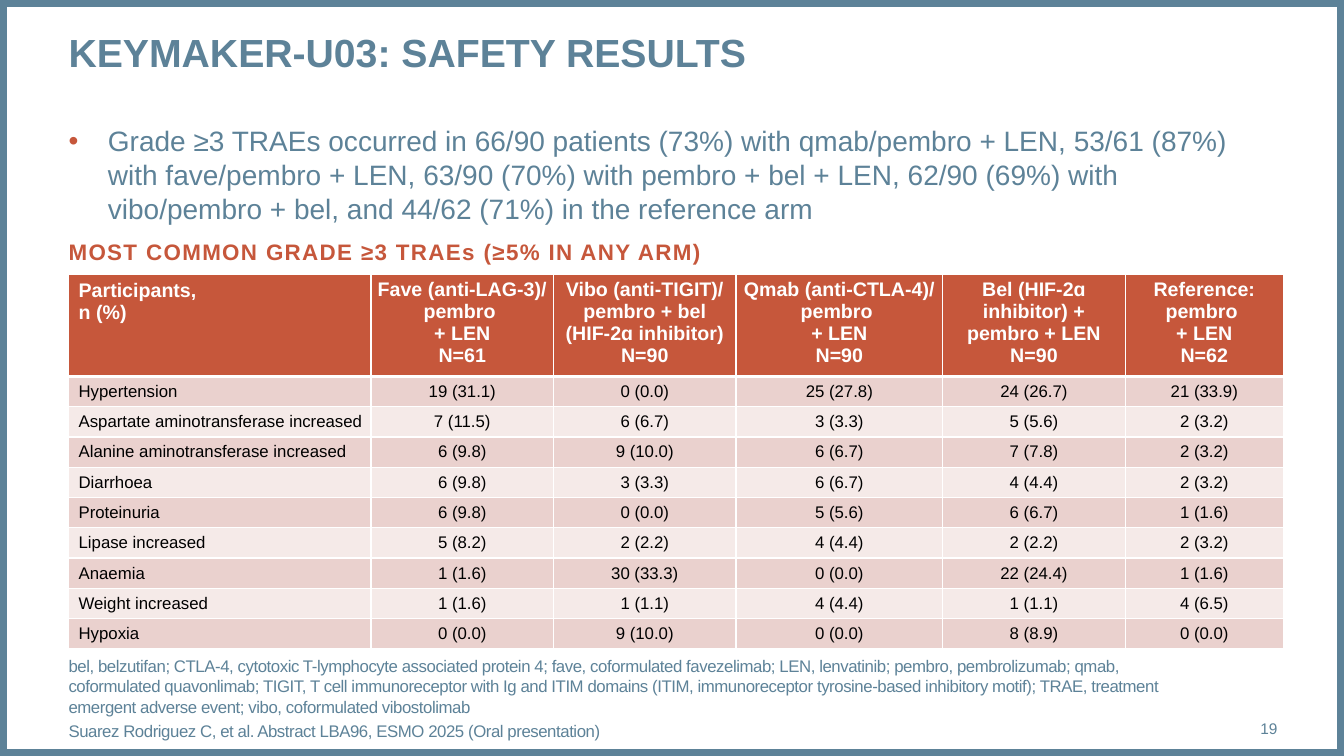
from lxml import etree
from pptx import Presentation
from pptx.dml.color import RGBColor
from pptx.enum.shapes import MSO_SHAPE as Preset
from pptx.enum.text import MSO_ANCHOR as Anchor, PP_ALIGN as Align
from pptx.oxml.ns import qn
from pptx.util import Inches, Pt

SLATE = RGBColor(0x5D, 0x82, 0x98)
RUST = RGBColor(0xC6, 0x57, 0x3B)
ROSE = RGBColor(0xEA, 0xD1, 0xCE)
BLUSH = RGBColor(0xF5, 0xEA, 0xE8)
WHITE = RGBColor(0xFF, 0xFF, 0xFF)
BLACK = RGBColor(0x00, 0x00, 0x00)

WIDTH, HEIGHT = Inches(13.33), Inches(7.5)
LEFT = 5.1
CONTENT_WIDTH = 89.95
COLUMN_SHARES = [22.51, 13.58, 13.58, 15.38, 13.58, 11.78]
HEADER_SHARE, ROW_SHARE = 12.67, 3.73
HEADER_MARGINS = (0.1, 0.05, 0.1, 0.05)
LABEL_MARGINS = (0.1, 0.05, 0, 0.05)
VALUE_MARGINS = (0.02, 0.04, 0.02, 0.04)

TITLE_FONT = {"size": Pt(28), "bold": True, "color": SLATE}
BODY_FONT = {"size": Pt(20), "bold": False, "color": SLATE}
HEADING_FONT = {"size": Pt(16), "bold": True, "color": RUST}
NOTE_FONT = {"size": Pt(12), "bold": False, "color": SLATE}
NUMBER_FONT = {"size": Pt(11), "bold": False, "color": SLATE}
HEADER_FONT = {"size": Pt(14), "bold": True, "color": WHITE}
CELL_FONT = {"size": Pt(12), "bold": False, "color": BLACK}

SUMMARY = (
    "Grade ≥3 TRAEs occurred in 66/90 patients (73%) with qmab/pembro + LEN, "
    "53/61 (87%) with fave/pembro + LEN, 63/90 (70%) with pembro + bel + LEN, "
    "62/90 (69%) with vibo/pembro + bel, and 44/62 (71%) in the reference arm"
)
NOTES = [
    "bel, belzutifan; CTLA-4, cytotoxic T-lymphocyte associated protein 4; "
    "fave, coformulated favezelimab; LEN, lenvatinib; pembro, pembrolizumab; "
    "qmab, coformulated quavonlimab; TIGIT, T cell immunoreceptor with Ig and ITIM "
    "domains (ITIM, immunoreceptor tyrosine-based inhibitory motif); TRAE, "
    "treatment emergent adverse event; vibo, coformulated vibostolimab",
    "Suarez Rodriguez C, et al. Abstract LBA96, ESMO 2025 (Oral presentation)",
]
HEADERS = [
    ["Participants,\nn (%)"],
    ["Fave (anti-LAG-3)/ pembro \n+ LEN\nN=61"],
    ["Vibo (anti-TIGIT)/\npembro + bel\n(HIF-2ɑ inhibitor)\nN=90"],
    ["Qmab (anti-CTLA-4)/\npembro \n+ LEN", "N=90"],
    ["Bel (HIF-2ɑ\ninhibitor) +\npembro + LEN", "N=90"],
    ["Reference:\npembro \n+ LEN", "N=62"],
]
EVENTS = [
    ("Hypertension", "19 (31.1)", "0 (0.0)", "25 (27.8)", "24 (26.7)", "21 (33.9)"),
    ("Aspartate aminotransferase increased",
     "7 (11.5)", "6 (6.7)", "3 (3.3)", "5 (5.6)", "2 (3.2)"),
    ("Alanine aminotransferase increased",
     "6 (9.8)", "9 (10.0)", "6 (6.7)", "7 (7.8)", "2 (3.2)"),
    ("Diarrhoea", "6 (9.8)", "3 (3.3)", "6 (6.7)", "4 (4.4)", "2 (3.2)"),
    ("Proteinuria", "6 (9.8)", "0 (0.0)", "5 (5.6)", "6 (6.7)", "1 (1.6)"),
    ("Lipase increased", "5 (8.2)", "2 (2.2)", "4 (4.4)", "2 (2.2)", "2 (3.2)"),
    ("Anaemia", "1 (1.6)", "30 (33.3)", "0 (0.0)", "22 (24.4)", "1 (1.6)"),
    ("Weight increased", "1 (1.6)", "1 (1.1)", "4 (4.4)", "1 (1.1)", "4 (6.5)"),
    ("Hypoxia", "0 (0.0)", "9 (10.0)", "0 (0.0)", "8 (8.9)", "0 (0.0)"),
]


def across(percent):
    return int(WIDTH * percent / 100)


def down(percent):
    return int(HEIGHT * percent / 100)


def place(left, top, width, height):
    return across(left), down(top), across(width), down(height)


def set_margins(target, margins):
    for side, inches in zip(("left", "top", "right", "bottom"), margins):
        setattr(target, f"margin_{side}", Inches(inches))


def style_font(font, values):
    font.name = "Arial"
    for name, value in values.items():
        if name == "color":
            font.color.rgb = value
        else:
            setattr(font, name, value)


def write(frame, texts, font, align=Align.LEFT, gap=0, tracking=0):
    for index, text in enumerate(texts):
        paragraph = frame.add_paragraph() if index else frame.paragraphs[0]
        paragraph.text = text
        paragraph.alignment = align
        if index and gap:
            paragraph.space_before = Pt(gap)
        for run in paragraph.runs:
            style_font(run.font, font)
            if tracking:
                run.font._element.set("spc", str(int(tracking * 100)))


def add_text(slide, area, texts, font, anchor=Anchor.TOP, margins=(0, 0, 0, 0),
             wrap=True, **options):
    frame = slide.shapes.add_textbox(*place(*area)).text_frame
    frame.word_wrap = wrap
    frame.vertical_anchor = anchor
    set_margins(frame, margins)
    write(frame, texts, font, **options)
    return frame


def add_bullet(paragraph, indent, color):
    properties = paragraph._p.get_or_add_pPr()
    properties.set("marL", str(Inches(indent)))
    properties.set("indent", str(-Inches(indent)))
    bullet_color = etree.SubElement(properties, qn("a:buClr"))
    etree.SubElement(bullet_color, qn("a:srgbClr"), val=str(color))
    etree.SubElement(properties, qn("a:buFont"), typeface="Arial")
    etree.SubElement(properties, qn("a:buChar"), char="•")


def add_frame(slide):
    shape = slide.shapes.add_shape(Preset.RECTANGLE, *place(0, 0, 100, 100))
    shape.shadow.inherit = False
    shape.fill.background()
    shape.line.color.rgb = SLATE
    shape.line.width = Pt(10)


def set_borders(cell, top=1, bottom=1):
    properties = cell._tc.get_or_add_tcPr()
    for side, width in (("L", 1), ("R", 1), ("T", top), ("B", bottom)):
        line = etree.SubElement(properties, qn(f"a:ln{side}"), w=str(Pt(width)))
        fill = etree.SubElement(line, qn("a:solidFill"))
        etree.SubElement(fill, qn("a:srgbClr"), val=str(WHITE))


def fill_cell(cell, texts, font, color, margins, align, anchor):
    cell.fill.solid()
    cell.fill.fore_color.rgb = color
    cell.vertical_anchor = anchor
    set_margins(cell, margins)
    write(cell.text_frame, texts, font, align)


def add_event_table(slide):
    height = HEADER_SHARE + ROW_SHARE * len(EVENTS)
    area = place(LEFT, 36.27, sum(COLUMN_SHARES), height)
    table = slide.shapes.add_table(len(EVENTS) + 1, len(HEADERS), *area).table
    table.horz_banding = False
    for column, share in zip(table.columns, COLUMN_SHARES):
        column.width = across(share)
    for index, row in enumerate(table.rows):
        row.height = down(ROW_SHARE if index else HEADER_SHARE)
    for index, texts in enumerate(HEADERS):
        cell = table.cell(0, index)
        set_borders(cell, bottom=3)
        fill_cell(cell, texts, HEADER_FONT, RUST,
                  VALUE_MARGINS if index else HEADER_MARGINS,
                  Align.CENTER if index else Align.LEFT, Anchor.TOP)
    for row, event in enumerate(EVENTS, 1):
        for index, text in enumerate(event):
            cell = table.cell(row, index)
            set_borders(cell, top=3 if row == 1 else 1)
            fill_cell(cell, [text], CELL_FONT, ROSE if row % 2 else BLUSH,
                      VALUE_MARGINS if index else LABEL_MARGINS,
                      Align.CENTER if index else Align.LEFT, Anchor.MIDDLE)


def main():
    presentation = Presentation()
    presentation.slide_width, presentation.slide_height = WIDTH, HEIGHT
    slide = presentation.slides.add_slide(presentation.slide_layouts[6])
    add_frame(slide)
    summary = add_text(slide, (LEFT, 16.4, CONTENT_WIDTH, 14.13), [SUMMARY], BODY_FONT)
    add_bullet(summary.paragraphs[0], 0.39, RUST)
    add_text(slide, (LEFT, 3.73, CONTENT_WIDTH, 12.53),
             ["KEYMAKER-U03: SAFETY RESULTS"], TITLE_FONT)
    add_text(slide, (LEFT, 92.67, 83.5, 5.33), NOTES, NOTE_FONT,
             anchor=Anchor.BOTTOM, gap=3, tracking=-0.3)
    add_text(slide, (88.6, 93.73, 6.45, 5.33), ["19"], NUMBER_FONT,
             anchor=Anchor.MIDDLE, align=Align.RIGHT)
    add_event_table(slide)
    add_text(slide, (LEFT, 30.8, 48.76, 4.93),
             ["MOST COMMON GRADE ≥3 TRAEs (≥5% IN ANY ARM)"], HEADING_FONT,
             margins=(0, 0.05, 0.1, 0.05), wrap=False, tracking=1)
    presentation.save("out.pptx")


if __name__ == "__main__":
    main()
